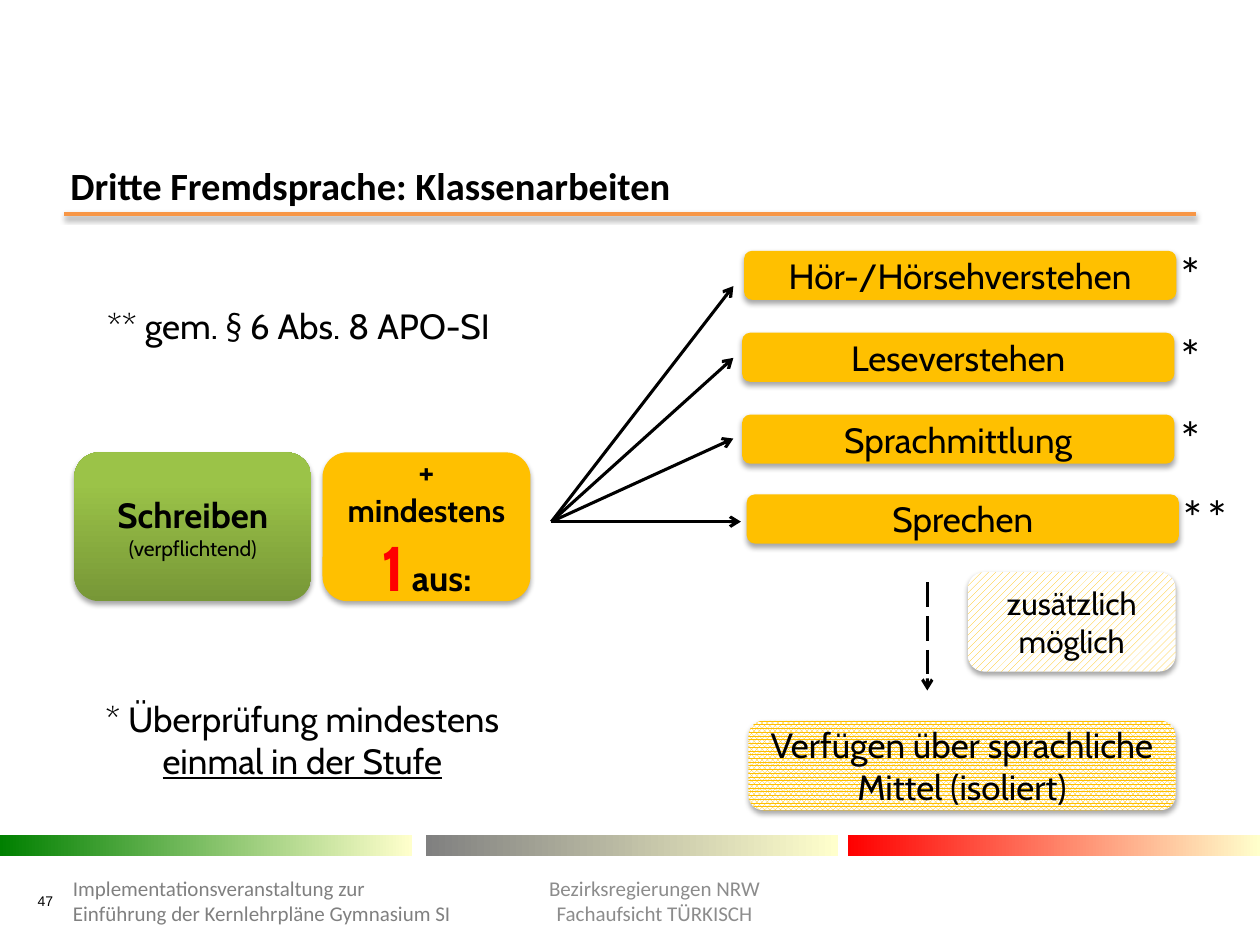
from lxml import etree
from pptx import Presentation
from pptx.dml.color import RGBColor
from pptx.enum.dml import MSO_LINE, MSO_PATTERN
from pptx.enum.shapes import MSO_CONNECTOR, MSO_SHAPE
from pptx.enum.text import MSO_ANCHOR, PP_ALIGN
from pptx.oxml.ns import qn
from pptx.util import Pt

RECT, ROUND = MSO_SHAPE.RECTANGLE, MSO_SHAPE.ROUNDED_RECTANGLE
STRAIGHT = MSO_CONNECTOR.STRAIGHT
DASH = MSO_LINE.LONG_DASH
DENSE, DIAGONAL = MSO_PATTERN.PERCENT_80, MSO_PATTERN.WIDE_UPWARD_DIAGONAL
LEFT, CENTER = PP_ALIGN.LEFT, PP_ALIGN.CENTER
MIDDLE, TOP, BOTTOM = MSO_ANCHOR.MIDDLE, MSO_ANCHOR.TOP, MSO_ANCHOR.BOTTOM
COLORS = {
    "black": "000000", "white": "FFFFFF", "amber": "FFC000", "red": "FF0000",
    "orange": "F79646", "green": "008000", "grey": "808080", "cream": "FFFFCC",
    "footer": "8C8C8C", "olive": "779737", "lime": "9BC348",
}


def rgb(name):
    return RGBColor.from_string(COLORS[name])


def add_shadow(s, alpha, dist):
    effects = s._element.spPr.get_or_add_effectLst()
    outer = etree.SubElement(effects, qn("a:outerShdw"), blurRad=str(Pt(3.1)),
                             dist=str(Pt(dist)), dir="5400000", rotWithShape="0")
    color = etree.SubElement(outer, qn("a:srgbClr"), val=COLORS["black"])
    etree.SubElement(color, qn("a:alpha"), val=str(alpha * 1000))


def write(s, lines, size, font="Cabin", color="black", align=CENTER, anchor=MIDDLE):
    tf = s.text_frame
    tf.word_wrap = True
    tf.vertical_anchor = anchor
    tf.text = "\n".join(lines)
    for p in tf.paragraphs:
        p.alignment = align
        for r in p.runs:
            r.font.size = Pt(size)
            r.font.name = font
            r.font.color.rgb = rgb(color)
    return tf


def add_text(slide, box, lines, size, **style):
    s = slide.shapes.add_textbox(*map(Pt, box))
    return write(s, lines, size, **style)


def add_box(slide, box, kind=ROUND, shadow=True):
    s = slide.shapes.add_shape(kind, *map(Pt, box))
    s.shadow.inherit = False
    s.line.fill.background()
    if shadow:
        add_shadow(s, 35, 1.8)
    return s


def fill_solid(s, color):
    s.fill.solid()
    s.fill.fore_color.rgb = rgb(color)


def fill_gradient(s, start, end, end_position=1, angle=0):
    s.fill.gradient()
    s.fill.gradient_angle = angle
    first, last = s.fill.gradient_stops
    first.color.rgb, last.color.rgb = rgb(start), rgb(end)
    first.position, last.position = 0, end_position


def fill_pattern(s, pattern):
    s.fill.patterned()
    s.fill.pattern = pattern
    s.fill.fore_color.rgb = rgb("amber")
    s.fill.back_color.rgb = rgb("white")


def add_line(slide, points, color="black", width=1.75):
    c = slide.shapes.add_connector(STRAIGHT, *map(Pt, points))
    c.line.color.rgb = rgb(color)
    c.line.width = Pt(width)
    return c


def add_arrow(slide, points, dash=None):
    c = add_line(slide, points)
    if dash:
        c.line.dash_style = dash
    etree.SubElement(c.get_or_add_ln(), qn("a:tailEnd"), type="arrow")
    c._element.spPr.get_or_add_effectLst()


def add_header(slide, x, y, w, h):
    rule = add_line(slide, (x, y + h, x + w, y + h), "orange", 2)
    add_shadow(rule, 38, 1.6)
    tf = add_text(slide, (x - 3.6, y, w, h), ["Dritte Fremdsprache: Klassenarbeiten"], 22,
                  font="Calibri", align=LEFT, anchor=BOTTOM)
    tf.paragraphs[0].runs[0].font.bold = True


def add_note(slide, box, lines):
    s = add_box(slide, box, shadow=False)
    fill_solid(s, "white")
    return write(s, lines, 20)


def add_requirements(slide, x, y, w, h):
    s = add_box(slide, (x, y, 135.4, h))
    fill_gradient(s, "olive", "lime", 0.8, 90)
    tf = write(s, ["Schreiben", "(verpflichtend)"], 20)
    tf.paragraphs[0].runs[0].font.bold = True
    tf.paragraphs[1].runs[0].font.size = Pt(12)

    s = add_box(slide, (x + w - 118.8, y, 118.8, h))
    fill_solid(s, "amber")
    p = write(s, [""], 18).paragraphs[0]
    parts = [("+ ", 20, "black"), ("mindestens ", 18, "black"), ("1", 36, "red"),
             (" ", 18, "black"), ("aus:", 20, "black")]
    for text, size, color in parts:
        r = p.add_run()
        r.text = text
        r.font.size = Pt(size)
        r.font.name = "Cabin"
        r.font.bold = True
        r.font.color.rgb = rgb(color)


def add_skills(slide, x, y, w, h):
    rows = [
        ("Hör-/Hörsehverstehen", "*", 1.1, 0, 20.2),
        ("Leseverstehen", "*", 0, 46.8, 61.2),
        ("Sprachmittlung", "*", 0, 93.6, 107.3),
        ("Sprechen", "**", 2.6, 139.2, 154.8),
    ]
    for name, mark, dx, dy, tip in rows:
        last = mark == "**"
        s = add_box(slide, (x + dx, y + dy, w, h))
        fill_solid(s, "amber")
        write(s, [name], 20)
        add_text(slide, (x + w - 5 + last * 1.4, y + dy - 7.8, 50.4 if last else 25.9, 41),
                 [mark], 28, font="Calibri", align=LEFT, anchor=TOP)
        add_arrow(slide, (x - 109, y + 154.8, x - 5 + last * 4.3, y + tip))


def add_extra(slide, x, y, w, h):
    add_arrow(slide, (x + 102.2, y + 5.8, x + 102.2, y + 67.7), DASH)
    s = add_box(slide, (x + w - 118.8, y, 118.8, 56.9))
    fill_pattern(s, DIAGONAL)
    write(s, ["zusätzlich möglich"], 18)
    s = add_box(slide, (x, y + h - 51.1, w, 51.1))
    fill_pattern(s, DENSE)
    write(s, ["Verfügen über sprachliche Mittel (isoliert)"], 20)


def add_footer(slide, x, y, w, h):
    bar_w, text_w = 235.4, 233.3
    bars = [(0, "green"), (243.4, "grey"), (w - bar_w, "red")]
    for dx, color in bars:
        s = add_box(slide, (x + dx, y, bar_w, 11.5), RECT, shadow=False)
        fill_gradient(s, color, "cream")
    add_text(slide, (x + 14.4, y + 23, text_w, 28.8), ["47"], 8, font="Arial", align=LEFT)
    add_text(slide, (x + 34.6, y + 23, text_w, 28.8),
             ["Implementationsveranstaltung zur\vEinführung der Kernlehrpläne Gymnasium SI"],
             12, font="Calibri", color="grey", align=LEFT)
    add_text(slide, (x + 269.3, y + 11.5, 209.5, h - 11.5),
             ["Bezirksregierungen NRW", "Fachaufsicht TÜRKISCH"],
             12, font="Calibri", color="footer")


def main():
    prs = Presentation()
    prs.slide_width, prs.slide_height = Pt(720), Pt(540)
    slide = prs.slides.add_slide(prs.slide_layouts[6])
    add_header(slide, 36.7, 76, 646.6, 46.4)
    add_note(slide, (40.3, 146.2, 260.6, 79.2), ["** gem. § 6 Abs. 8 APO-SI"])
    add_requirements(slide, 42.5, 258.5, 260.6, 85)
    tf = add_note(slide, (42.5, 383, 260.6, 79.2),
                  ["* Überprüfung mindestens", "einmal in der Stufe"])
    tf.paragraphs[1].runs[0].font.underline = True
    add_skills(slide, 424.1, 143.3, 247, 28.1)
    add_extra(slide, 427.7, 326.9, 244.1, 136.1)
    add_footer(slide, 0, 477.4, 720, 62.6)
    prs.save("out.pptx")


if __name__ == "__main__":
    main()
